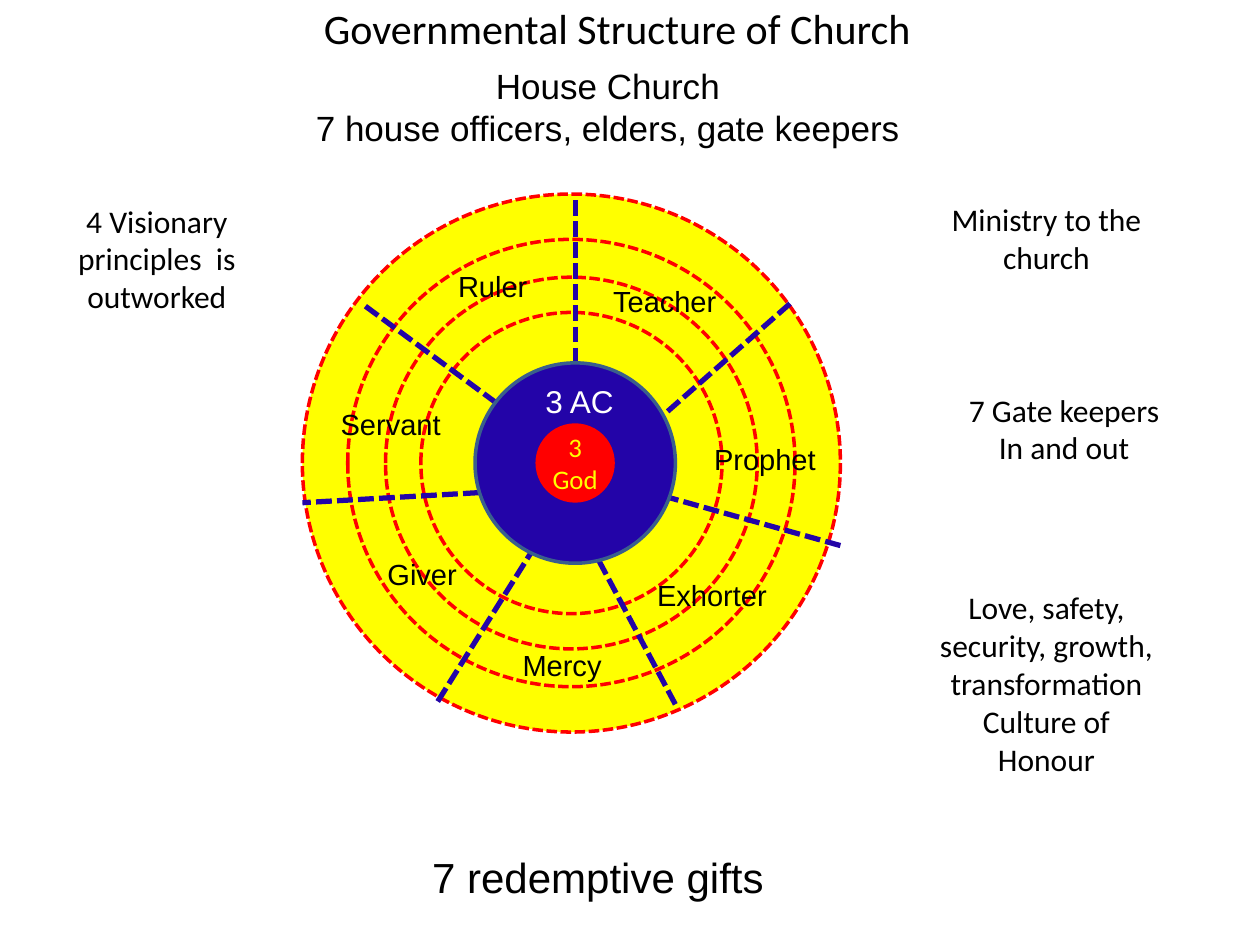
from dataclasses import dataclass

from lxml import etree
from pptx import Presentation
from pptx.dml.color import RGBColor
from pptx.enum.dml import MSO_LINE
from pptx.enum.shapes import MSO_CONNECTOR, MSO_SHAPE
from pptx.enum.text import MSO_ANCHOR, PP_ALIGN
from pptx.oxml.ns import qn
from pptx.util import Inches, Pt

OVAL = MSO_SHAPE.OVAL
STRAIGHT = MSO_CONNECTOR.STRAIGHT
DASH = MSO_LINE.SQUARE_DOT
CENTER = PP_ALIGN.CENTER
TOP, MIDDLE = MSO_ANCHOR.TOP, MSO_ANCHOR.MIDDLE


@dataclass(frozen=True)
class Theme:
    black: str = "000000"
    white: str = "FFFFFF"
    yellow: str = "FFFF00"
    red: str = "FF0000"
    navy: str = "2304A8"
    rim: str = "3A5F8C"
    sans: str = "Arial"
    body: str = "Calibri"
    heading: float = 24
    subheading: float = 20
    note: float = 18
    gift: float = 16.6
    core: float = 15.3


T = Theme()
RING_INSETS = (0, 0.36, 0.66, 0.94)
SPOKES = (
    (2.17, 0.05, 2.17, 1.38),
    (3.87, 0.87, 2.7, 1.9),
    (0.5, 0.89, 1.61, 1.71),
    (4.27, 2.79, 2.77, 2.37),
    (2.96, 4.05, 2.3, 2.81),
    (1.4, 2.37, 0, 2.45),
    (1.85, 2.79, 1.06, 4.05),
)
GIFTS = (
    ("Ruler", 1.07, 0.59, 0.88),
    ("Servant", 0.26, 1.69, 0.88),
    ("Giver", 0.51, 2.88, 0.88),
    ("Mercy", 1.62, 3.6, 0.88),
    ("Exhorter", 2.73, 3.04, 1.04),
    ("Prophet", 3.23, 1.96, 0.88),
    ("Teacher", 2.35, 0.71, 1.05),
)
NOTES = (
    ((7.36, 1.54, 1.89, 0.71), ("Ministry to the church",)),
    ((7.5, 3.05, 1.89, 0.71), ("7 Gate keepers", "In and out")),
    ((7.36, 4.62, 1.89, 1.92),
     ("Love, safety, security, growth, transformation", "Culture of Honour")),
    ((0.3, 1.55, 1.89, 1.01), ("4 Visionary principles  is outworked",)),
)


def write(sp, paragraphs, size, font, color=T.black, anchor=TOP, inset=(0, 0)):
    tf = sp.text_frame
    side, edge = map(Inches, inset)
    frame = {"word_wrap": True, "vertical_anchor": anchor, "margin_left": side,
             "margin_right": side, "margin_top": edge, "margin_bottom": edge}
    for name, value in frame.items():
        setattr(tf, name, value)
    for i, text in enumerate(paragraphs):
        p = tf.add_paragraph() if i else tf.paragraphs[0]
        p.text = text
        p.alignment = CENTER
        for r in p.runs:
            for name, value in {"size": Pt(size), "name": font}.items():
                setattr(r.font, name, value)
            r.font.color.rgb = RGBColor.from_string(color)


def add_text(s, box, paragraphs, size, font, **style):
    write(s.shapes.add_textbox(*map(Inches, box)), paragraphs, size, font, **style)


def set_line(line, color, width, dash=None):
    line.color.rgb = RGBColor.from_string(color)
    for name, value in {"width": Pt(width), "dash_style": dash}.items():
        setattr(line, name, value)


def add_disc(shapes, left, top, size, fill=None, rim=None, dash=None):
    sp = shapes.add_shape(OVAL, *map(Inches, (left, top, size, size)))
    sp.shadow.inherit = False
    if fill:
        sp.fill.solid()
        sp.fill.fore_color.rgb = RGBColor.from_string(fill)
    else:
        sp.fill.background()
    if rim:
        set_line(sp.line, rim, 2, dash)
    else:
        sp.line.fill.background()
    return sp


def add_spoke(s, x1, y1, x2, y2):
    spoke = s.shapes.add_connector(STRAIGHT, *map(Inches, (x1, y1, x2, y2)))
    set_line(spoke.line, T.navy, 3, DASH)
    etree.SubElement(spoke._element.spPr, qn("a:effectLst"))


def add_headings(s, left, top, width):
    add_text(s, (left + 0.81, top, 5.28, 0.4),
             ("Governmental Structure of Church",), T.heading, T.body)
    add_text(s, (left, top + 0.49, width, 0.82),
             ("House Church\n7 house officers, elders, gate keepers",),
             T.subheading, T.sans)


def add_wheel(s, left, top, size):
    rings = s.shapes.add_group_shape()
    for inset in RING_INSETS:
        add_disc(rings.shapes, left + inset, top + inset, size - 2 * inset,
                 None if inset else T.yellow, T.red, DASH)
    for x1, y1, x2, y2 in SPOKES:
        add_spoke(s, left + x1, top + y1, left + x2, top + y2)
    add_disc(s.shapes, left + 1.37, top + 1.34, 1.59, T.navy, T.rim)
    core = add_disc(s.shapes, left + 1.85, top + 1.82, 0.63, T.red)
    write(core, ("3 God",), T.core, T.body, T.yellow, MIDDLE)
    for gift, x, y, width in GIFTS:
        add_text(s, (left + x, top + y, width, 0.27), (gift,), T.gift, T.sans)
    add_text(s, (left + 1.53, top + 1.49, 1.34, 0.35), ("3 AC",),
             T.note, T.sans, color=T.white)


def add_notes(s):
    for box, paragraphs in NOTES:
        add_text(s, box, paragraphs, T.note, T.body, inset=(0.1, 0.05))


def add_footer(s, box):
    add_text(s, box, ("7 redemptive gifts",), T.heading, T.sans)


def main():
    prs = Presentation()
    prs.slide_width, prs.slide_height = Inches(10), Inches(7.5)
    s = prs.slides.add_slide(prs.slide_layouts[6])
    add_headings(s, 1.45, 0.02, 6.75)
    add_wheel(s, 2.4, 1.54, 4.27)
    add_notes(s)
    add_footer(s, (3.19, 6.76, 3.11, 0.47))
    prs.save("out.pptx")


if __name__ == "__main__":
    main()
